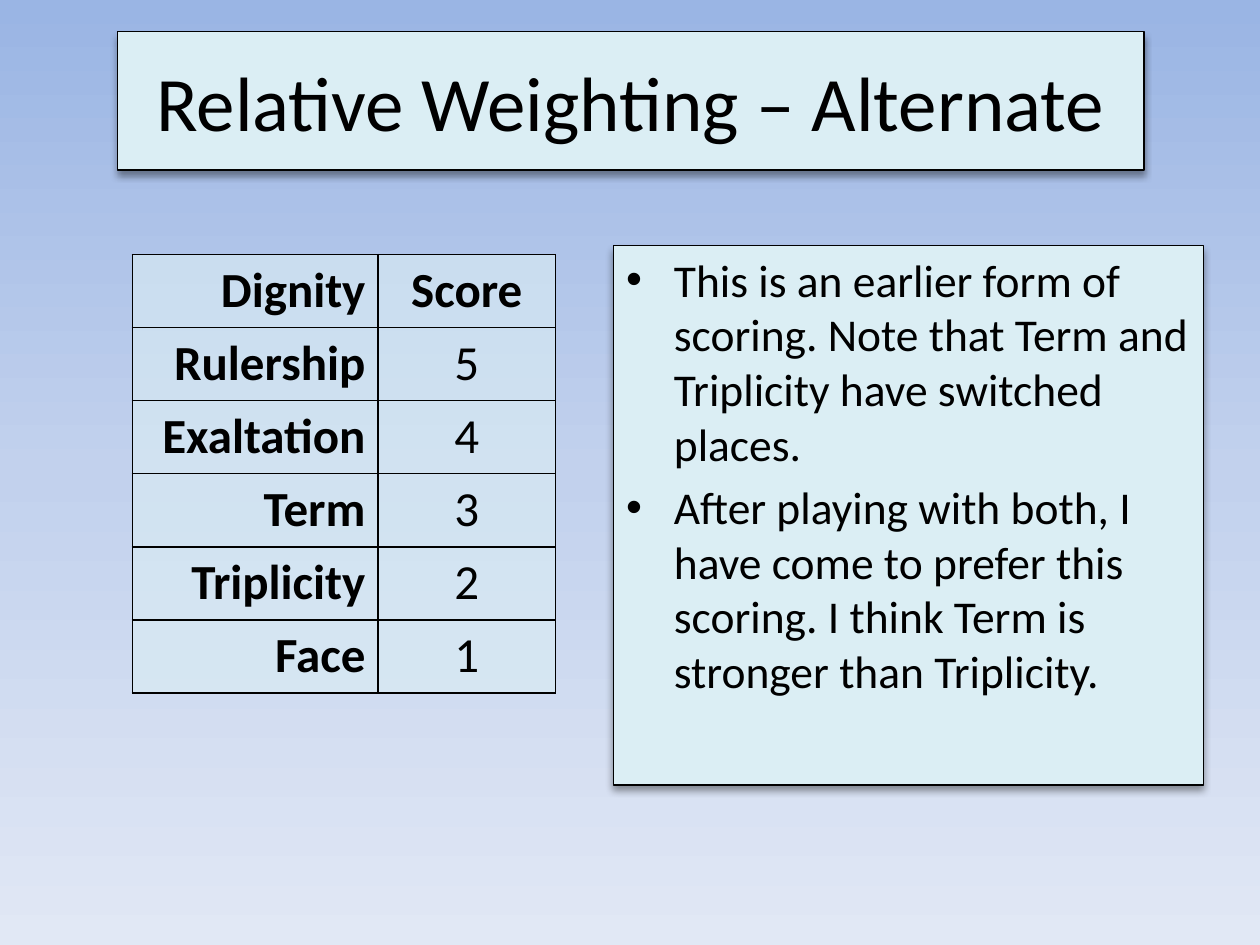
from copy import deepcopy
from dataclasses import dataclass

from lxml import etree
from pptx import Presentation
from pptx import util as u
from pptx.dml.color import RGBColor
from pptx.enum import shapes, text
from pptx.oxml import ns

FONT = "Calibri"
INK = "000000"
PANEL = "DBEEF4"
SKY = [(0, "9AB5E4"), (0.5, "C2D1ED"), (1, "E1E8F5")]
SCORES = [("Dignity", "Score"), ("Rulership", "5"), ("Exaltation", "4"),
          ("Term", "3"), ("Triplicity", "2"), ("Face", "1")]
NOTES = [
    "This is an earlier form of scoring. Note that Term and Triplicity have switched places.",
    "After playing with both, I have come to prefer this scoring. "
    "I think Term is stronger than Triplicity.",
]


@dataclass
class Panel:
    left: float
    top: float
    width: float
    height: float
    size: int
    lines: list[str]
    bulleted: bool = False


PANELS = [
    Panel(0.93, 0.25, 8.15, 1.1, 44, ["Relative Weighting – Alternate"]),
    Panel(4.87, 1.95, 4.68, 4.28, 26, NOTES, bulleted=True),
]


def colour(value: str) -> RGBColor:
    return RGBColor.from_string(value)


def add_element(parent, tag: str, **attributes: str):
    return etree.SubElement(parent, ns.qn(tag), attributes)


def add_colour(parent, value: str, alpha: int = 100) -> None:
    rgb = add_element(parent, "a:srgbClr", val=value)
    if alpha < 100:
        add_element(rgb, "a:alpha", val=str(alpha * 1000))


def style(para, size: float, bold: bool = False) -> None:
    for span in para.runs:
        span.font.name = FONT
        span.font.size = u.Pt(size)
        span.font.bold = bold
        span.font.color.rgb = colour(INK)


def paint_background(page) -> None:
    fill = page.background.fill
    fill.gradient()
    fill.gradient_angle = 270
    stop_list = page.background._cSld.find(".//" + ns.qn("a:gsLst"))
    stop_list.insert(1, deepcopy(stop_list[0]))
    for stop, (position, value) in zip(fill.gradient_stops, SKY):
        stop.position = position
        stop.color.rgb = colour(value)


def add_shadow(box) -> None:
    box.shadow.inherit = False
    effects = box._element.spPr.find(ns.qn("a:effectLst"))
    shadow = add_element(effects, "a:outerShdw", blurRad=str(u.Pt(4)),
                         dist=str(u.Pt(3)), dir="5400000", rotWithShape="0")
    add_colour(shadow, INK, 40)


def add_bullet(para) -> None:
    indent = u.Inches(0.38)
    properties = para._p.get_or_add_pPr()
    properties.set("marL", str(indent))
    properties.set("indent", str(-indent))
    add_element(properties, "a:buFont", typeface="Arial")
    add_element(properties, "a:buChar", char="•")


def draw_panel(page, panel: Panel) -> None:
    box = page.shapes.add_shape(
        shapes.MSO_SHAPE.RECTANGLE, u.Inches(panel.left), u.Inches(panel.top),
        u.Inches(panel.width), u.Inches(panel.height))
    box.fill.solid()
    box.fill.fore_color.rgb = colour(PANEL)
    box.line.color.rgb = colour(INK)
    box.line.width = u.Pt(0.75)
    add_shadow(box)

    frame = box.text_frame
    frame.word_wrap = True
    frame.text = "\n".join(panel.lines)
    frame.vertical_anchor = (text.MSO_ANCHOR.TOP if panel.bulleted
                             else text.MSO_ANCHOR.MIDDLE)
    for index, para in enumerate(frame.paragraphs):
        para.alignment = text.PP_ALIGN.LEFT if panel.bulleted else text.PP_ALIGN.CENTER
        if panel.bulleted:
            add_bullet(para)
        if index:
            para.space_before = u.Pt(0.2 * panel.size)
        style(para, panel.size)


def style_cell(cell) -> None:
    properties = cell._tc.get_or_add_tcPr()
    for side in ("a:lnL", "a:lnR", "a:lnT", "a:lnB"):
        border = add_element(properties, side, w=str(u.Pt(1)))
        add_colour(add_element(border, "a:solidFill"), INK)
    add_colour(add_element(properties, "a:solidFill"), PANEL, 60)


def draw_scores(page) -> None:
    widths = [1.95, 1.41]
    row_height = 0.58
    table = page.shapes.add_table(
        len(SCORES), len(widths), u.Inches(1.05), u.Inches(2.02),
        u.Inches(sum(widths)), u.Inches(row_height * len(SCORES))).table
    table.horz_banding = False
    for column, width in zip(table.columns, widths):
        column.width = u.Inches(width)
    for r, entries in enumerate(SCORES):
        table.rows[r].height = u.Inches(row_height)
        for c, entry in enumerate(entries):
            cell = table.cell(r, c)
            cell.text = entry
            para = cell.text_frame.paragraphs[0]
            para.alignment = text.PP_ALIGN.CENTER if c else text.PP_ALIGN.RIGHT
            style(para, 28, bold=r == 0 or c == 0)
            style_cell(cell)


def main() -> None:
    deck = Presentation()
    deck.slide_width, deck.slide_height = u.Inches(10), u.Inches(7.5)
    page = deck.slides.add_slide(deck.slide_layouts[6])
    paint_background(page)

    # Title, score table, commentary
    title, commentary = PANELS
    draw_panel(page, title)
    draw_scores(page)
    draw_panel(page, commentary)
    deck.save("out.pptx")


if __name__ == "__main__":
    main()
